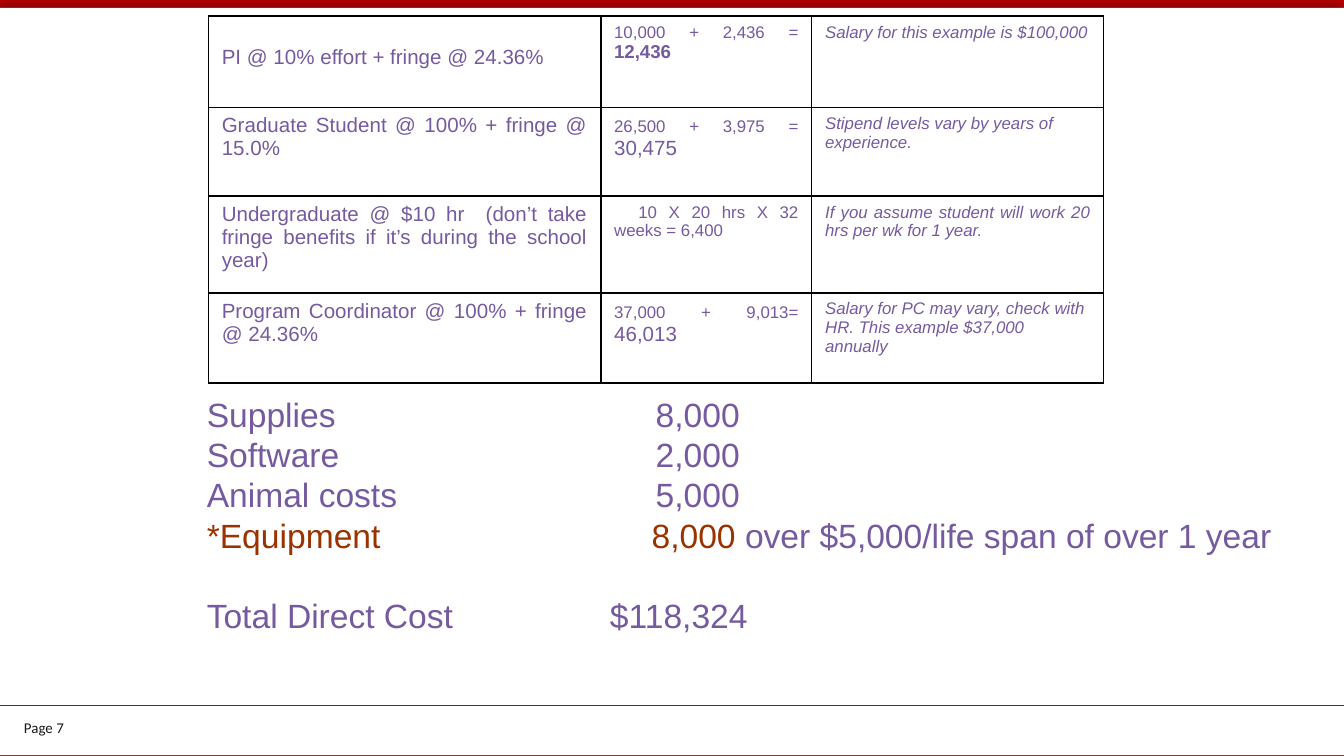
from dataclasses import dataclass

from lxml.etree import SubElement
from pptx import Presentation
from pptx.dml.color import RGBColor
from pptx.enum.shapes import MSO_CONNECTOR, MSO_SHAPE
from pptx.enum.text import PP_ALIGN
from pptx.oxml.ns import qn
from pptx.util import Inches, Pt


@dataclass(frozen=True)
class Theme:
    red: str = "C00000"
    white: str = "FFFFFF"
    black: str = "000000"
    purple: str = "755AA0"
    rust: str = "993300"
    footer: str = "181818"
    body_font: str = "Arial"
    footer_font: str = "Calibri"
    cost_size: int = 18
    item_size: int = 11
    bold_size: int = 10
    note_size: int = 9
    footer_size: int = 8


THEME = Theme()
ITEM = {"size": THEME.item_size}
NOTE = {"size": THEME.note_size}
REMARK = {"size": THEME.note_size, "italic": True}

# Each row: item, amount runs, remark, remark alignment
SALARIES = [
    ("PI @ 10% effort + fringe @ 24.36%",
     [("10,000 + 2,436 = ", NOTE), ("12,436", {"size": THEME.bold_size, "bold": True})],
     "Salary for this example is $100,000", PP_ALIGN.LEFT),
    ("Graduate Student @ 100% + fringe @ 15.0%",
     [("26,500 + 3,975 =", NOTE), (" 30,475", ITEM)],
     "Stipend levels vary by years of experience.", PP_ALIGN.LEFT),
    ("Undergraduate @ $10 hr  (don’t take fringe benefits if it’s during the school year)",
     [("10 X 20 hrs X 32 weeks = 6,400", NOTE)],
     "If you assume student will work 20 hrs per wk for 1 year.", PP_ALIGN.JUSTIFY),
    ("Program Coordinator @ 100% + fringe @ 24.36%",
     [("37,000 + 9,013=", NOTE), (" 46,013", ITEM)],
     "Salary for PC may vary, check with HR. This example $37,000 annually", PP_ALIGN.LEFT),
]
COLUMN_WIDTHS = [2.92, 1.57, 2.17]
ROW_HEIGHTS = [0.68, 0.66, 0.72, 0.67]

# Each paragraph: runs, tab position, space before in points
COSTS = [
    ([("Supplies\t8,000\nSoftware\t2,000\nAnimal costs\t5,000", {})], 3.34, 0),
    ([("*Equipment\t8,000 ", {"color": THEME.rust}),
      ("over $5,000/life span of over 1 year", {})], 3.31, 0),
    ([("Total Direct Cost\t$118,324", {})], 3, 21.6),
]


def rgb(color):
    return RGBColor.from_string(color)


def add_text(paragraph, text, size=THEME.cost_size, color=THEME.purple,
             font=THEME.body_font, bold=False, italic=False):
    for index, line in enumerate(text.split("\n")):
        if index:
            paragraph.add_line_break()
        run = paragraph.add_run()
        run.text = line
        run.font.size = Pt(size)
        run.font.name = font
        run.font.bold = bold
        run.font.italic = italic
        run.font.color.rgb = rgb(color)


def add_text_frame(slide, left, top, width, height):
    frame = slide.shapes.add_textbox(
        Inches(left), Inches(top), Inches(width), Inches(height)).text_frame
    frame.word_wrap = True
    return frame


def add_page(slide):
    """White page below the red band, with a soft upward shadow."""
    page = slide.shapes.add_shape(
        MSO_SHAPE.RECTANGLE, 0, Inches(0.06), Inches(10), Inches(5.56))
    page.fill.solid()
    page.fill.fore_color.rgb = rgb(THEME.white)
    page.line.fill.background()
    page.shadow.inherit = False
    effects = page.element.spPr.find(qn("a:effectLst"))
    shadow = SubElement(effects, qn("a:outerShdw"), blurRad=str(Pt(5)),
                        dist=str(Pt(2)), dir="16200000", rotWithShape="0")
    tint = SubElement(shadow, qn("a:srgbClr"), val=THEME.black)
    SubElement(tint, qn("a:alpha"), val="30000")


def add_footer(slide):
    page_number = add_text_frame(slide, 0.08, 5.3, 0.92, 0.24)
    add_text(page_number.paragraphs[0], "Page 7", size=THEME.footer_size,
             color=THEME.footer, font=THEME.footer_font)
    rule = slide.shapes.add_connector(
        MSO_CONNECTOR.STRAIGHT, 0, Inches(5.25), Inches(10), Inches(5.25))
    rule.line.color.rgb = rgb(THEME.red)
    rule.line.width = Pt(0.75)
    SubElement(rule.element.spPr, qn("a:effectLst"))


def fill_cell(cell, runs, align):
    paragraph = cell.text_frame.paragraphs[0]
    paragraph.alignment = align
    for text, style in runs:
        add_text(paragraph, text, **style)
    properties = cell._tc.get_or_add_tcPr()
    for side in ("a:lnL", "a:lnR", "a:lnT", "a:lnB"):
        border = SubElement(properties, qn(side), w=str(Pt(1)))
        fill = SubElement(border, qn("a:solidFill"))
        SubElement(fill, qn("a:srgbClr"), val=THEME.black)
    cell.fill.background()


def add_salary_table(slide):
    table = slide.shapes.add_table(
        len(ROW_HEIGHTS), len(COLUMN_WIDTHS), Inches(1.55), Inches(0.12),
        Inches(sum(COLUMN_WIDTHS)), Inches(sum(ROW_HEIGHTS))).table
    table.first_row = table.horz_banding = False
    for column, width in zip(table.columns, COLUMN_WIDTHS):
        column.width = Inches(width)
    for row, height, (item, amount, remark, align) in zip(table.rows, ROW_HEIGHTS, SALARIES):
        row.height = Inches(height)
        item_cell, amount_cell, remark_cell = row.cells
        fill_cell(item_cell, [(item, ITEM)], PP_ALIGN.JUSTIFY)
        fill_cell(amount_cell, amount, PP_ALIGN.JUSTIFY)
        fill_cell(remark_cell, [(remark, REMARK)], align)
    # The first item sits one line lower; the hourly sum has a first-line indent
    table.cell(0, 0).margin_top = Inches(0.22)
    hourly = table.cell(2, 1).text_frame.paragraphs[0]
    hourly._p.get_or_add_pPr().set("indent", str(Inches(0.18)))


def add_costs(slide):
    frame = add_text_frame(slide, 1.44, 2.88, 8.41, 2.02)
    for index, (runs, tab, space) in enumerate(COSTS):
        paragraph = frame.add_paragraph() if index else frame.paragraphs[0]
        if space:
            paragraph.space_before = Pt(space)
        tabs = SubElement(paragraph._p.get_or_add_pPr(), qn("a:tabLst"))
        SubElement(tabs, qn("a:tab"), pos=str(Inches(tab)), algn="l")
        for text, style in runs:
            add_text(paragraph, text, **style)


def main():
    deck = Presentation()
    deck.slide_width, deck.slide_height = Inches(10), Inches(5.625)
    slide = deck.slides.add_slide(deck.slide_layouts[6])
    slide.background.fill.solid()
    slide.background.fill.fore_color.rgb = rgb(THEME.red)
    add_page(slide)
    add_footer(slide)
    add_salary_table(slide)
    add_costs(slide)
    deck.save("out.pptx")


if __name__ == "__main__":
    main()
